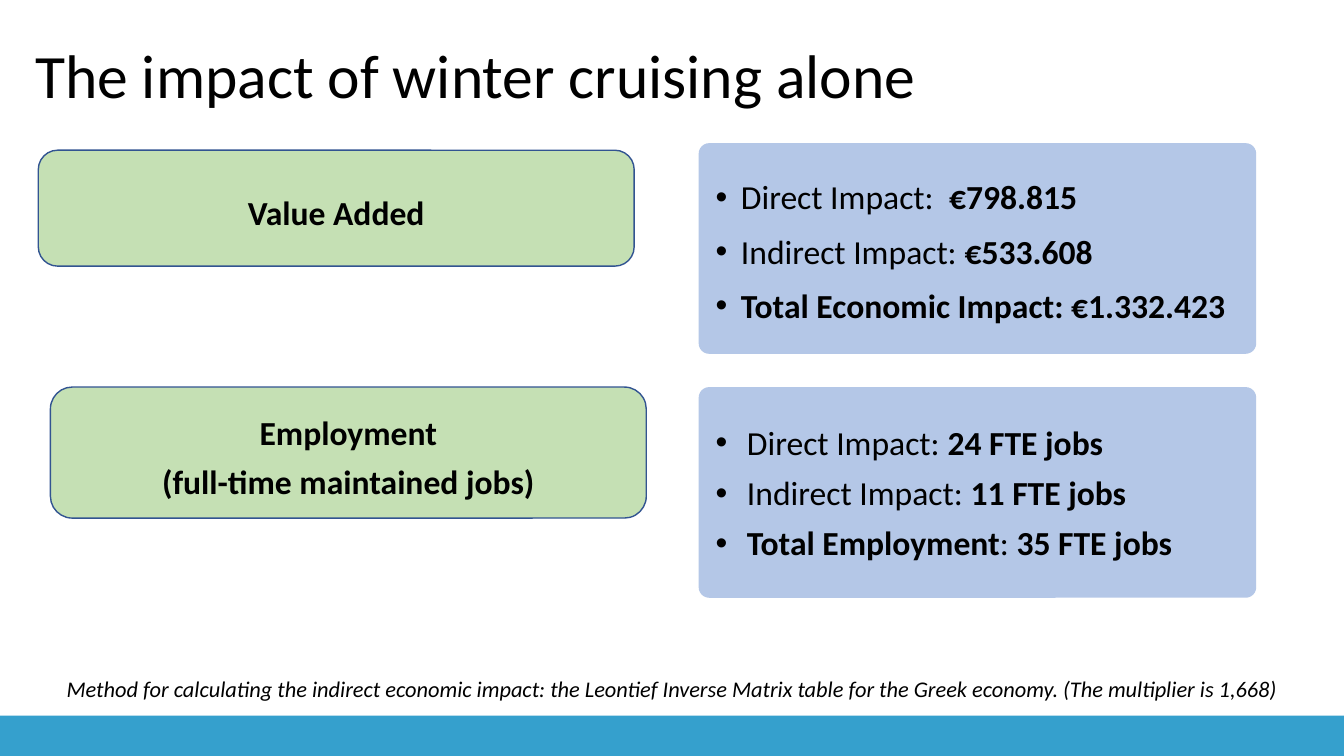
import pptx
import pptx.util
import pptx.dml.color
import pptx.enum.shapes
import pptx.enum.text
import pptx.oxml.ns
import lxml.etree

PX = 9144
KIND = pptx.enum.shapes.MSO_SHAPE
ALIGN = pptx.enum.text.PP_ALIGN
ANCHOR = pptx.enum.text.MSO_ANCHOR


def px(n):
    """Turn px into EMU."""
    return pptx.util.Emu(n * PX)


def color(code):
    """Turn a hex string into a colour."""
    return pptx.dml.color.RGBColor.from_string(code)


def panel(slide, kind, box, fill, line=None, round=None):
    """Draw a filled shape and return it."""
    shape = slide.shapes.add_shape(kind, *map(px, box))
    shape.shadow.inherit = False
    shape.fill.solid()
    shape.fill.fore_color.rgb = color(fill)
    if line:
        shape.line.color.rgb = color(line)
        shape.line.width = pptx.util.Pt(1)
    else:
        shape.line.fill.background()
    if round is not None:
        shape.adjustments[0] = round
    return shape


def style(para, size, space, bold=None, italic=None):
    """Format a paragraph and its runs."""
    para.line_spacing = space
    for run in para.runs:
        font = run.font
        font.name = "Calibri"
        font.size = pptx.util.Pt(size)
        font.color.rgb = color("000000")
        if bold is not None:
            font.bold = bold
        if italic is not None:
            font.italic = italic


def text(slide, box):
    """Add a wrapping text box and return its frame."""
    frame = slide.shapes.add_textbox(*map(px, box)).text_frame
    frame.word_wrap = True
    return frame


def bullet(para, indent):
    """Give a paragraph a hanging round bullet."""
    props = para._p.get_or_add_pPr()
    props.set("marL", str(px(indent)))
    props.set("indent", str(-px(indent)))
    for tag, key, value in (("a:buFont", "typeface", "Arial"),
                            ("a:buChar", "char", "•")):
        node = lxml.etree.SubElement(props, pptx.oxml.ns.qn(tag))
        node.set(key, value)


def label(slide, box, words):
    """Draw a green label with bold centred lines."""
    shape = panel(slide, KIND.ROUNDED_RECTANGLE, box, "C5E0B4", "325491")
    frame = shape.text_frame
    frame.text = words
    frame.word_wrap = True
    frame.vertical_anchor = ANCHOR.MIDDLE
    for para in frame.paragraphs:
        para.alignment = ALIGN.CENTER
        style(para, 24, 1.2, bold=True)


def facts(slide, box, rows, indent, space):
    """Add bulleted rows of (plain or bold) pieces."""
    frame = text(slide, box)
    for i, row in enumerate(rows):
        para = frame.add_paragraph() if i else frame.paragraphs[0]
        for words, bold in row:
            run = para.add_run()
            run.text = words
            run.font.bold = bold
        style(para, 24, space)
        para.space_before = pptx.util.Pt(10)
        bullet(para, indent)


def main():
    """Build the slide and save it."""
    deck = pptx.Presentation()
    deck.slide_width, deck.slide_height = px(1333), px(750)
    slide = deck.slides.add_slide(deck.slide_layouts[6])

    panel(slide, KIND.RECTANGLE, (0, 710, 1333, 40), "35A0CD")
    for top in (142, 384):
        panel(slide, KIND.ROUNDED_RECTANGLE, (693, top, 553, 209),
              "B4C7E7", round=0.05)

    title = text(slide, (25, 5, 1150, 145))
    title.text = "Τhe impact of winter cruising alone"
    title.vertical_anchor = ANCHOR.MIDDLE
    style(title.paragraphs[0], 44, 0.9)

    note = text(slide, (0, 670, 1333, 32))
    note.text = ("Method for calculating the indirect economic impact: "
                 "the Leontief Inverse Matrix table for the Greek economy. "
                 "(The multiplier is 1,668)")
    note.paragraphs[0].alignment = ALIGN.CENTER
    style(note.paragraphs[0], 16, 0.8, italic=True)

    label(slide, (38, 149, 591, 115), "Value Added")
    label(slide, (50, 384, 591, 130),
          "Employment\n(full-time maintained jobs)")

    facts(slide, (700, 170, 539, 168), [
        [("Direct Impact:  ", False), ("€798.815", True)],
        [("Indirect Impact: ", False), ("€533.608", True)],
        [("Total Economic Impact: €1.332.423", True)],
    ], 25, 1.0)
    facts(slide, (700, 418, 539, 189), [
        [("Direct Impact: ", False), ("24 FTE jobs", True)],
        [("Indirect Impact: ", False), ("11 FTE jobs", True)],
        [("Total Employment", True), (": ", False), ("35 FTE jobs", True)],
    ], 31, 0.9)

    deck.save("out.pptx")


if __name__ == "__main__":
    main()
